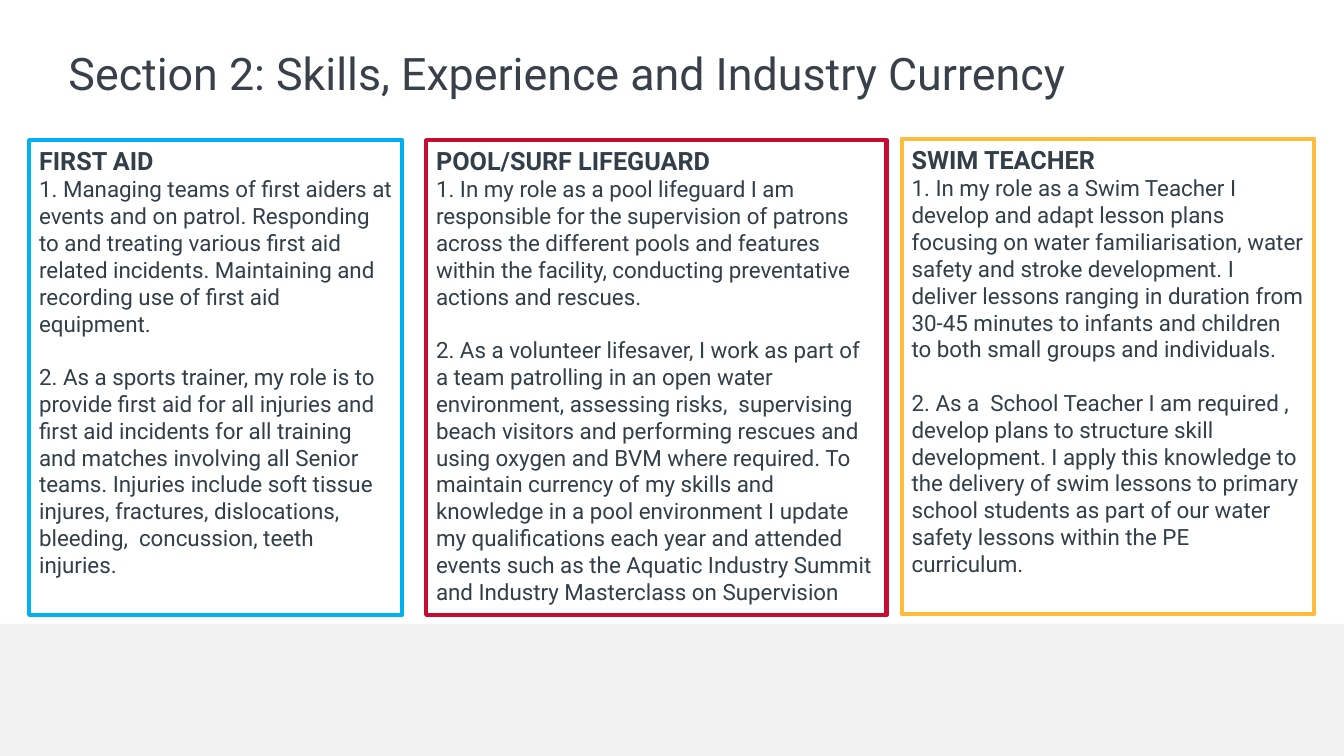
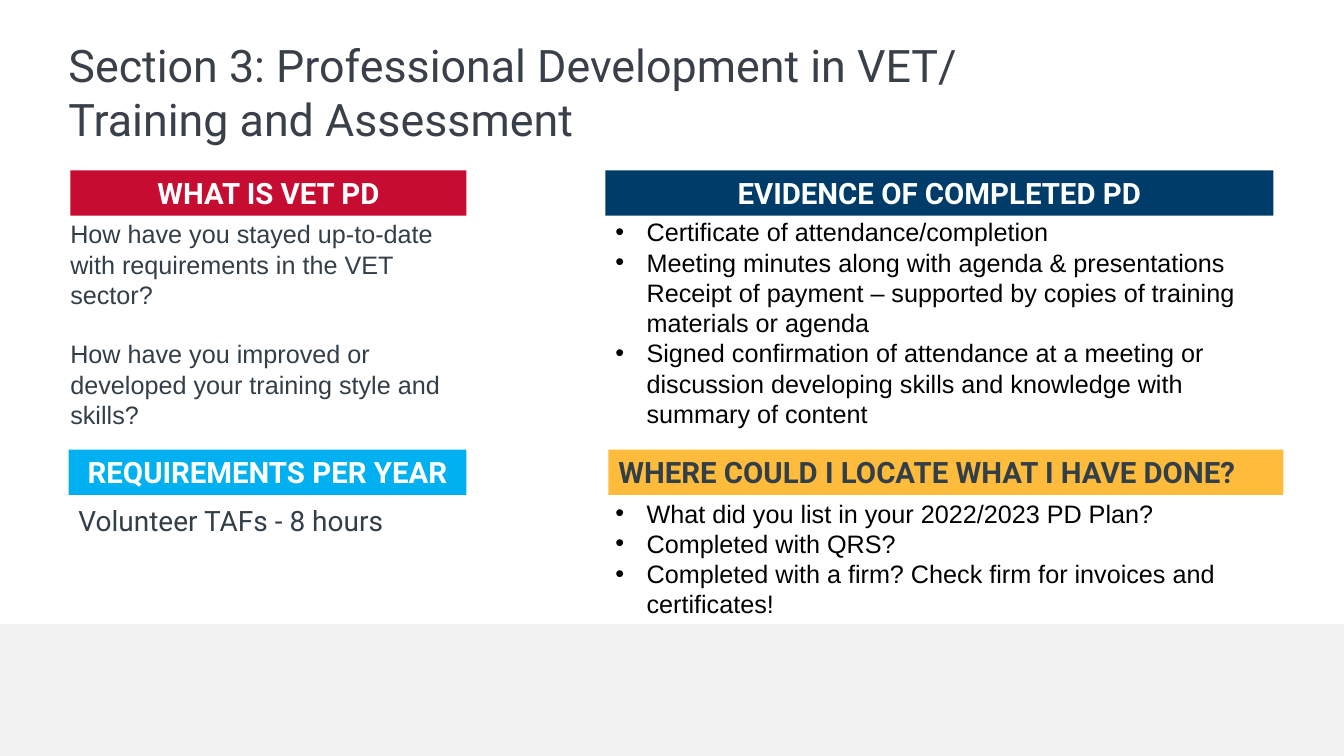
from lxml import etree
from pptx import Presentation, util as u
from pptx.dml.color import RGBColor
from pptx.enum import shapes, text
from pptx.oxml.ns import qn

PX = u.Inches(1) // 100
WIDTH, HEIGHT = 1334, 750
COLOURS = {"band": "F2F2F2", "title": "394049", "ink": "323E48", "black": "000000",
           "white": "FFFFFF", "blue": "00B0F0", "red": "C60C30", "yellow": "FFBC3C",
           "navy": "003C69"}
# style: font, points, colour, bold
STYLES = {
    "title": ("Roboto", 32, "title", False),
    "card head": ("Roboto", 18, "ink", True),
    "card body": ("Roboto", 16, "ink", False),
    "bar": ("Roboto", 21, "white", True),
    "dark bar": ("Roboto", 21, "ink", True),
    "question": ("Arial", 18, "ink", False),
    "hours": ("Roboto", 20, "ink", False),
    "bullet": ("Arial", 18, "black", False),
}
BULLET_INDENT = 31

prs = Presentation()
prs.slide_width, prs.slide_height = WIDTH * PX, HEIGHT * PX


def add_box(slide, area, paragraphs=(), fill=None, outline=None, align=text.PP_ALIGN.LEFT):
    """Add a rectangle, or a text box if it has no fill or outline.

    Each paragraph is (style, wording, points of space before).
    """
    area = [n * PX for n in area]
    if fill or outline:
        box = slide.shapes.add_shape(shapes.MSO_SHAPE.RECTANGLE, *area)
        box.shadow.inherit = False
    else:
        box = slide.shapes.add_textbox(*area)
    if fill:
        box.fill.solid()
        box.fill.fore_color.rgb = RGBColor.from_string(COLOURS[fill])
    else:
        box.fill.background()
    if outline:
        box.line.color.rgb = RGBColor.from_string(COLOURS[outline])
        box.line.width = u.Pt(3)
    else:
        box.line.fill.background()
    frame = box.text_frame
    frame.word_wrap = True
    frame.vertical_anchor = text.MSO_ANCHOR.TOP
    for i, (style, wording, before) in enumerate(paragraphs):
        para = frame.paragraphs[0] if i == 0 else frame.add_paragraph()
        para.alignment = align
        para.space_before = u.Pt(before)
        if style == "bullet":
            props = para._p.get_or_add_pPr()
            props.set("marL", str(BULLET_INDENT * PX))
            props.set("indent", str(-BULLET_INDENT * PX))
            etree.SubElement(props, qn("a:buFont"), typeface="Arial")
            etree.SubElement(props, qn("a:buChar"), char="•")
        font, size, colour, bold = STYLES[style]
        for n, line in enumerate(wording.split("\n")):
            if n:
                para.add_line_break()
            run = para.add_run()
            run.text = line
            run.font.name, run.font.size, run.font.bold = font, u.Pt(size), bold
            run.font.color.rgb = RGBColor.from_string(COLOURS[colour])
    return box


def add_titled_slide(title, top, height):
    slide = prs.slides.add_slide(prs.slide_layouts[6])
    add_box(slide, (0, 619, WIDTH, HEIGHT - 619), fill="band")
    frame = add_box(slide, (68, top, 1197, height), [("title", title, 0)]).text_frame
    frame.margin_left = frame.margin_right = frame.margin_top = frame.margin_bottom = 0
    frame.vertical_anchor = text.MSO_ANCHOR.BOTTOM
    return slide


# Section 2: one outlined card per role
skills = add_titled_slide("Section 2: Skills, Experience and Industry Currency", 44, 55)
roles = [
    ("FIRST AID", (29, 139, 370, 471), "blue",
     "1. Managing teams of first aiders at events and on patrol. Responding to and treating "
     "various first aid related incidents. Maintaining and recording use of first aid equipment.",
     "2. As a sports trainer, my role is to provide first aid for all injuries and first aid "
     "incidents for all training and matches involving all Senior teams. Injuries include soft "
     "tissue injures, fractures, dislocations, bleeding,  concussion, teeth injuries."),
    ("POOL/SURF LIFEGUARD", (423, 139, 457, 471), "red",
     "1. In my role as a pool lifeguard I am responsible for the supervision of patrons across "
     "the different pools and features within the facility, conducting preventative actions "
     "and rescues.",
     "2. As a volunteer lifesaver, I work as part of a team patrolling in an open water "
     "environment, assessing risks,  supervising beach visitors and performing rescues and "
     "using oxygen and BVM where required. To maintain currency of my skills and knowledge in "
     "a pool environment I update my qualifications each year and attended events such as the "
     "Aquatic Industry Summit and Industry Masterclass on Supervision"),
    ("SWIM TEACHER", (895, 138, 409, 471), "yellow",
     "1. In my role as a Swim Teacher I develop and adapt lesson plans focusing on water "
     "familiarisation, water safety and stroke development. I deliver lessons ranging in "
     "duration from 30-45 minutes to infants and children to both small groups and individuals.",
     "2. As a  School Teacher I am required , develop plans to structure skill development. "
     "I apply this knowledge to the delivery of swim lessons to primary school students as "
     "part of our water safety lessons within the PE curriculum."),
]
for role, area, colour, first, second in roles:
    add_box(skills, area, [("card head", role, 0), ("card body", first, 0),
                           ("card body", second, 19)], outline=colour)

# Section 3: coloured heading bars, each with its answer below
development = add_titled_slide(
    "Section 3: Professional Development in VET/\nTraining and Assessment", 33, 111)
CENTRE, LEFT = text.PP_ALIGN.CENTER, text.PP_ALIGN.LEFT
topics = [
    ("WHAT IS VET PD", (70, 169, 393, 45), "red", "bar", CENTRE, (60, 212, 393, 222), [
        ("question", "How have you stayed up-to-date with requirements in the VET sector?", 0),
        ("question", "How have you improved or developed your training style and skills?", 21)]),
    ("REQUIREMENTS PER YEAR", (68, 446, 395, 45), "blue", "bar", CENTRE, (68, 495, 395, 44), [
        ("hours", "Volunteer TAFs - 8 hours", 0)]),
    ("EVIDENCE OF COMPLETED PD", (601, 169, 663, 45), "navy", "bar", CENTRE,
     (601, 210, 681, 222), [
        ("bullet", "Certificate of attendance/completion", 0),
        ("bullet", "Meeting minutes along with agenda & presentations Receipt of payment – "
                   "supported by copies of training materials or agenda", 0),
        ("bullet", "Signed confirmation of attendance at a meeting or discussion developing "
                   "skills and knowledge with summary of content", 0)]),
    ("WHERE COULD I LOCATE WHAT I HAVE DONE?", (604, 446, 670, 45), "yellow", "dark bar", LEFT,
     (601, 489, 681, 131), [
        ("bullet", "What did you list in your 2022/2023 PD Plan?", 0),
        ("bullet", "Completed with QRS?", 0),
        ("bullet", "Completed with a firm? Check firm for invoices and certificates!", 0)]),
]
for heading, bar_area, colour, style, align, answer_area, answer in topics:
    add_box(development, answer_area, answer)
    add_box(development, bar_area, [(style, heading, 0)], fill=colour, align=align)

prs.save("out.pptx")
